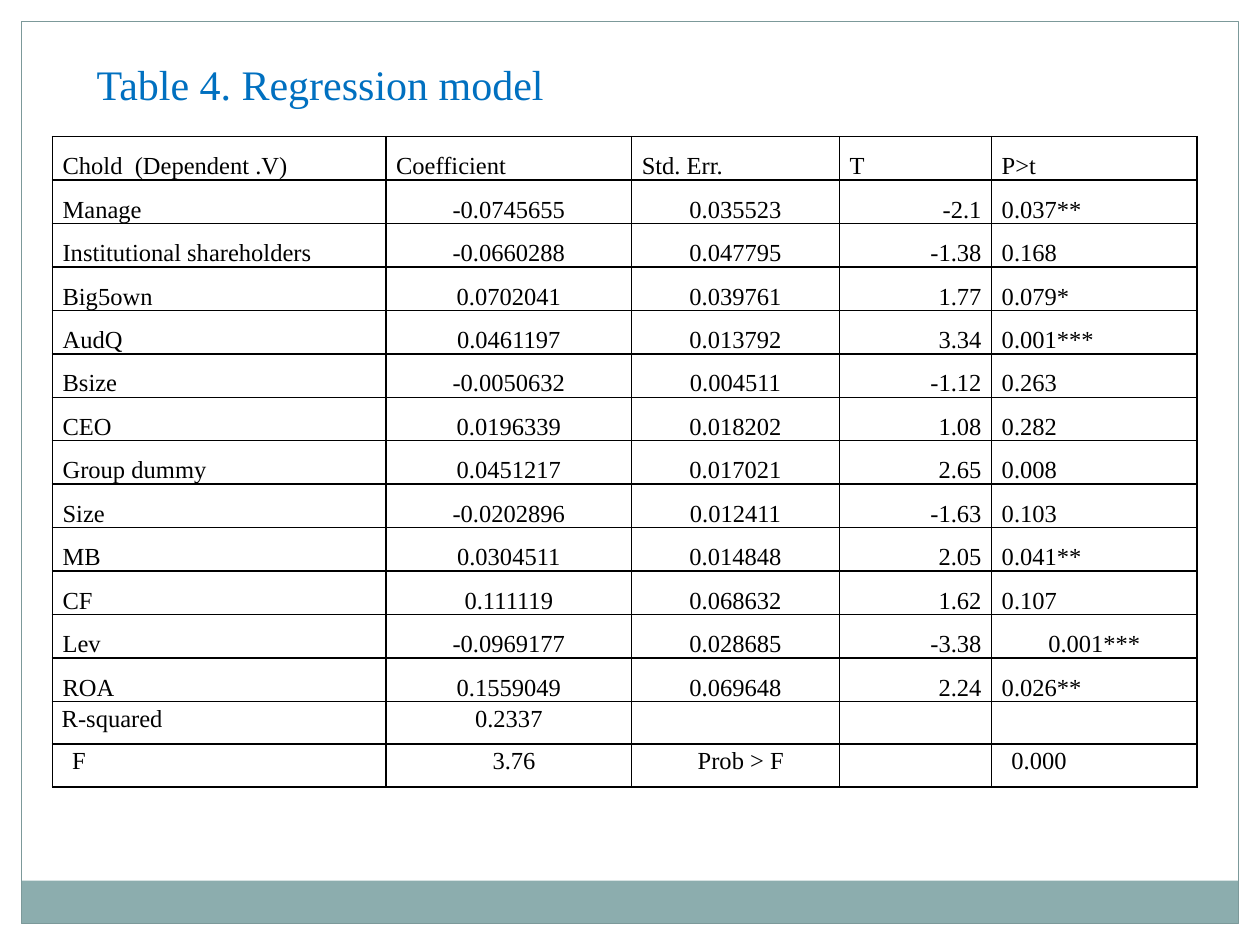
"""Builds the regression model table slide."""
from lxml.etree import SubElement
from pptx import Presentation
from pptx.dml.color import RGBColor
from pptx.enum.shapes import MSO_SHAPE as Shape
from pptx.enum.text import MSO_ANCHOR as Anchor, PP_ALIGN as Align
from pptx.oxml.ns import qn
from pptx.util import Pt

COLORS = {"title": "0070C0", "text": "000000", "border": "000000",
          "margin": "FFFFFF", "band": "8CADAE", "frame": "7C999A"}
FONT = "Times New Roman"
TITLE = "Table 4. Regression model"
HEADER = ("Chold  (Dependent .V)", "Coefficient", "Std. Err.", "T", "P>t")
VARIABLES = [
    ("Manage", "-0.0745655", "0.035523", "-2.1", "0.037**"),
    ("Institutional shareholders", "-0.0660288", "0.047795", "-1.38", "0.168"),
    ("Big5own", "0.0702041", "0.039761", "1.77", "0.079*"),
    ("AudQ", "0.0461197", "0.013792", "3.34", "0.001***"),
    ("Bsize", "-0.0050632", "0.004511", "-1.12", "0.263"),
    ("CEO", "0.0196339", "0.018202", "1.08", "0.282"),
    ("Group dummy", "0.0451217", "0.017021", "2.65", "0.008"),
    ("Size", "-0.0202896", "0.012411", "-1.63", "0.103"),
    ("MB", "0.0304511", "0.014848", "2.05", "0.041**"),
    ("CF", "0.111119", "0.068632", "1.62", "0.107"),
    ("Lev", "-0.0969177", "0.028685", "-3.38", "0.001***"),
    ("ROA", "0.1559049", "0.069648", "2.24", "0.026**"),
]
SUMMARY = [
    ("R-squared", "0.2337", "", "", ""),
    ("F", "3.76", "Prob > F", "", "0.000"),
]
ROWS = [HEADER] + VARIABLES + SUMMARY
COLUMN_WIDTHS = (190.6, 140.4, 118.7, 87, 117.4)
ALIGNMENTS = (Align.LEFT, Align.CENTER, Align.CENTER, Align.RIGHT, Align.LEFT)
SPECIAL_ALIGNMENTS = {("Lev", 4): Align.CENTER, ("R-squared", 0): Align.JUSTIFY}
ROW_HEIGHT, SUMMARY_HEIGHT = 24.85, 24.4
SLIDE_WIDTH, SLIDE_HEIGHT = 720, 540
MARGIN = 12.2
BAND_HEIGHT = 24.5


def color(name):
    return RGBColor.from_string(COLORS[name])


def add_run(paragraph, text, size, color_name):
    run = paragraph.add_run()
    run.text = text
    run.font.name, run.font.size, run.font.bold = FONT, Pt(size), False
    run.font.color.rgb = color(color_name)


def add_rectangle(slide, left, top, width, height, fill=None, line=None):
    shape = slide.shapes.add_shape(Shape.RECTANGLE, Pt(left), Pt(top), Pt(width), Pt(height))
    shape.shadow.inherit = False
    if fill:
        shape.fill.solid()
        shape.fill.fore_color.rgb = color(fill)
    else:
        shape.fill.background()
    if line:
        shape.line.color.rgb = color(line)
        shape.line.width = Pt(0.75)
    else:
        shape.line.fill.background()


def add_backdrop(slide):
    width, height = SLIDE_WIDTH - 2 * MARGIN, SLIDE_HEIGHT - 2 * MARGIN
    add_rectangle(slide, 0, 0, SLIDE_WIDTH, MARGIN, fill="margin")
    for left in (SLIDE_WIDTH - MARGIN, 0):
        add_rectangle(slide, left, 0, MARGIN, SLIDE_HEIGHT, fill="margin")
    add_rectangle(slide, MARGIN, MARGIN + height - BAND_HEIGHT, width, BAND_HEIGHT, fill="band")
    add_rectangle(slide, MARGIN, MARGIN, width, height, line="frame")


def add_borders(cell):
    properties = cell._tc.get_or_add_tcPr()
    for position, side in enumerate(("a:lnL", "a:lnR", "a:lnT", "a:lnB")):
        line = SubElement(properties, qn(side), w=str(Pt(1)))
        fill = SubElement(line, qn("a:solidFill"))
        SubElement(fill, qn("a:srgbClr"), val=COLORS["border"])
        properties.insert(position, line)


def fill_cell(cell, text, alignment, is_summary, indent):
    cell.fill.background()
    add_borders(cell)
    cell.vertical_anchor = Anchor.TOP if is_summary else Anchor.BOTTOM
    cell.margin_left = cell.margin_right = Pt(5.3 if is_summary else 5.8)
    cell.margin_top = cell.margin_bottom = Pt(0)
    if text:
        paragraph = cell.text_frame.paragraphs[0]
        paragraph.alignment = alignment
        paragraph.line_spacing = 1.15
        if indent:
            paragraph._p.get_or_add_pPr().set("marL", str(Pt(indent)))
        add_run(paragraph, text, 14, "text")


def add_regression_table(slide):
    heights = [SUMMARY_HEIGHT if row in SUMMARY else ROW_HEIGHT for row in ROWS]
    table = slide.shapes.add_table(len(ROWS), len(HEADER), Pt(30), Pt(78),
                                   Pt(sum(COLUMN_WIDTHS)), Pt(sum(heights))).table
    table.first_row = table.horz_banding = False
    for column, width in zip(table.columns, COLUMN_WIDTHS):
        column.width = Pt(width)
    for row_index, (values, height) in enumerate(zip(ROWS, heights)):
        table.rows[row_index].height = Pt(height)
        for column_index, text in enumerate(values):
            alignment = Align.LEFT if values is HEADER else ALIGNMENTS[column_index]
            alignment = SPECIAL_ALIGNMENTS.get((values[0], column_index), alignment)
            fill_cell(table.cell(row_index, column_index), text, alignment,
                      values in SUMMARY, 6 if values[0] == "F" else 0)


def add_title(slide):
    title = slide.shapes.title
    title.left, title.top, title.width, title.height = Pt(48), Pt(30), Pt(612), Pt(36)
    title.text_frame.vertical_anchor = Anchor.TOP
    title.text_frame.word_wrap = True
    paragraph = title.text_frame.paragraphs[0]
    paragraph.alignment = Align.LEFT
    add_run(paragraph, TITLE, 24, "title")


def main():
    presentation = Presentation()
    presentation.slide_width, presentation.slide_height = Pt(SLIDE_WIDTH), Pt(SLIDE_HEIGHT)
    slide = presentation.slides.add_slide(presentation.slide_layouts[5])
    add_backdrop(slide)
    add_regression_table(slide)
    add_title(slide)
    presentation.save("out.pptx")


if __name__ == "__main__":
    main()
